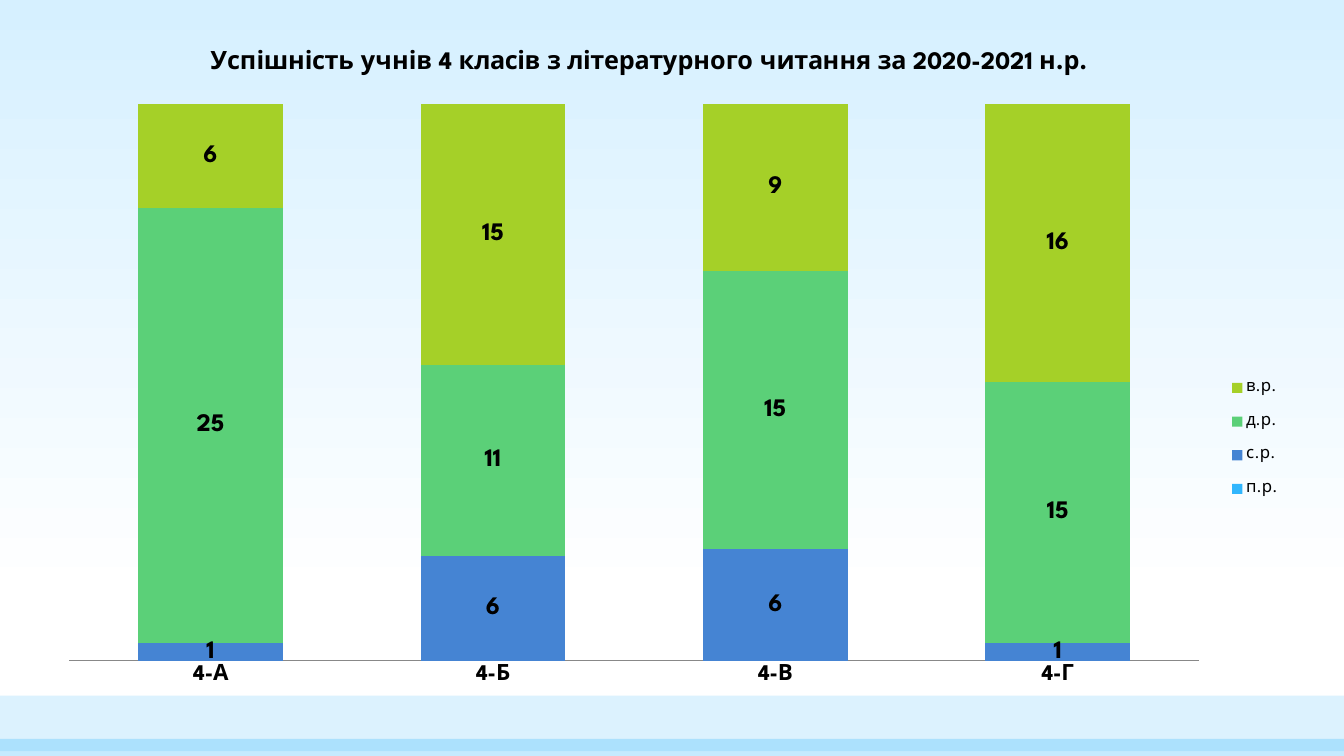
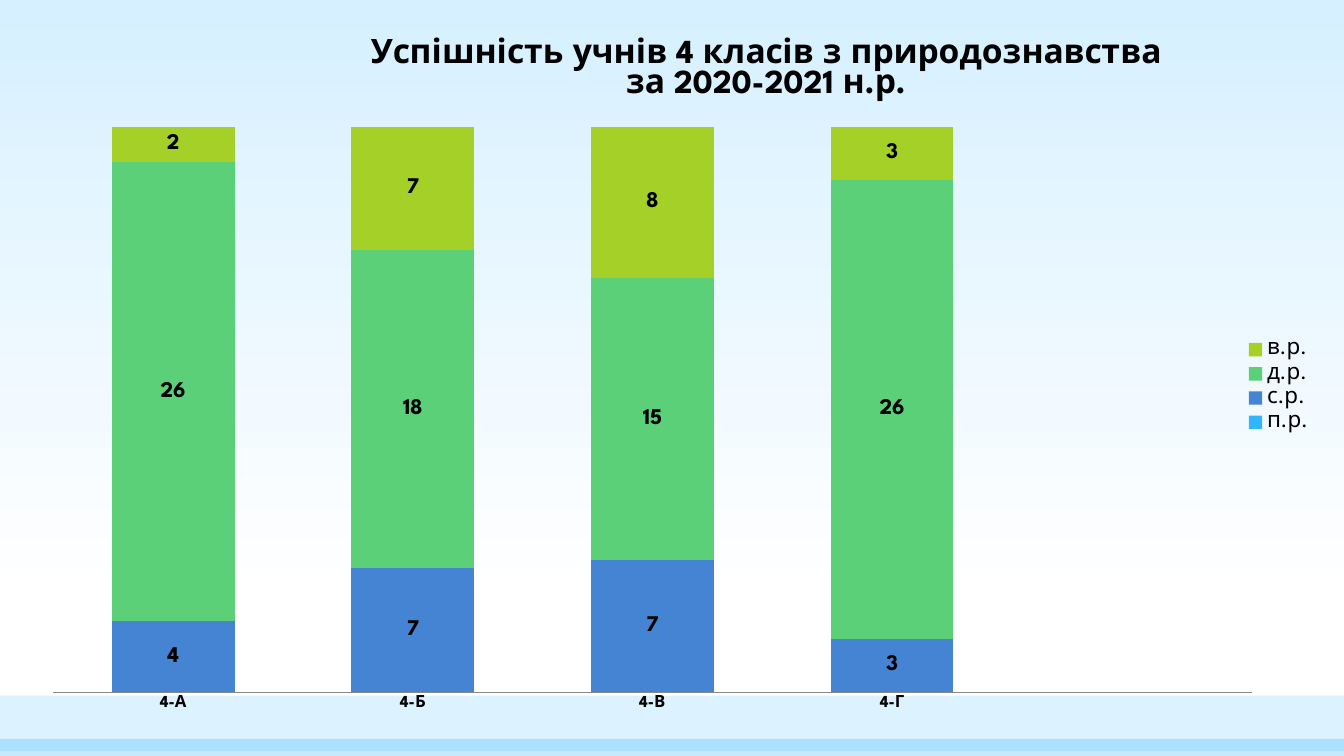
from lxml.etree import SubElement
from pptx import Presentation
from pptx.chart.data import CategoryChartData
from pptx.dml.color import RGBColor
from pptx.enum.chart import XL_CHART_TYPE, XL_LEGEND_POSITION, XL_TICK_MARK
from pptx.enum.shapes import MSO_SHAPE
from pptx.oxml.ns import qn
from pptx.util import Cm, Pt

FONT = "League Spartan"
BLACK = RGBColor(0x00, 0x00, 0x00)
WHITE = RGBColor(0xFF, 0xFF, 0xFF)
SKY = RGBColor(0xD6, 0xF0, 0xFF)
AXIS_GRAY = RGBColor(0x88, 0x88, 0x88)
CYAN = RGBColor(0x31, 0xB6, 0xFD)
BLUE = RGBColor(0x45, 0x84, 0xD3)
GREEN = RGBColor(0x5B, 0xD0, 0x78)
LIME = RGBColor(0xA5, 0xD0, 0x28)

LEVELS = [("п.р.", CYAN), ("с.р.", BLUE), ("д.р.", GREEN), ("в.р.", LIME)]
CLASSES = ["4-А", "4-Б", "4-В", "4-Г"]


def set_background(master):
    fill = master.background.fill
    fill.gradient()
    fill.gradient_angle = 270
    for stop, color, position in zip(fill.gradient_stops, (SKY, WHITE), (0, 0.79)):
        stop.color.rgb = color
        stop.position = position


def add_band(s, top, height, opacity):
    """Add a full-width translucent band; opacity is in percent."""
    band = s.shapes.add_shape(MSO_SHAPE.RECTANGLE, 0, Cm(top), Cm(33.87), Cm(height))
    band.shadow.inherit = False
    band.fill.solid()
    band.fill.fore_color.rgb = CYAN
    band.line.fill.background()
    color = band._element.spPr.find(".//" + qn("a:srgbClr"))
    SubElement(color, qn("a:alpha"), val=str(opacity * 1000))


def set_layout(element, index, box, inner=False):
    """Place a chart part at fractions of the chart: x, y and optionally w, h."""
    for old in element.findall(qn("c:layout")):
        element.remove(old)
    layout = SubElement(element, qn("c:layout"))
    element.insert(index, layout)
    manual = SubElement(layout, qn("c:manualLayout"))
    if inner:
        SubElement(manual, qn("c:layoutTarget"), val="inner")
    for mode in ("xMode", "yMode"):
        SubElement(manual, qn("c:" + mode), val="edge")
    for name, value in zip("xywh", box):
        SubElement(manual, qn("c:" + name), val=str(value))


def style_font(font, size, bold=False):
    font.name = FONT
    font.size = Pt(size)
    font.bold = bold
    font.color.rgb = BLACK


def add_title(chart, lines, size, place):
    tf = chart.chart_title.text_frame
    tf.text = "\n".join(lines)
    for p in tf.paragraphs:
        style_font(p.font, size, True)
    set_layout(chart.chart_title._element, 1, place)


def add_legend(chart, size, box):
    chart.has_legend = True
    chart.legend.position = XL_LEGEND_POSITION.RIGHT
    chart.legend.include_in_layout = False
    style_font(chart.legend.font, size)
    set_layout(chart.legend._element, 1, box)


def style_axes(chart, size):
    axis = chart.category_axis
    axis.major_tick_mark = XL_TICK_MARK.NONE
    axis.format.line.color.rgb = AXIS_GRAY
    style_font(axis.tick_labels.font, size, True)
    chart.value_axis.has_major_gridlines = False
    chart.value_axis.visible = False


def add_level_chart(s, box, categories, counts, plot_box, label_size, axis_size):
    """Add a 100% column chart; counts holds one list per level."""
    data = CategoryChartData()
    data.categories = categories
    for (name, _), values in zip(LEVELS, counts):
        data.add_series(name, values + [None] * (len(categories) - len(values)))
    chart = s.shapes.add_chart(
        XL_CHART_TYPE.COLUMN_STACKED_100, *map(Cm, box), data).chart
    style_font(chart.font, 10)
    plot = chart.plots[0]
    plot.gap_width = 95
    plot.overlap = 100
    plot.vary_by_categories = False
    plot.has_data_labels = True
    plot.data_labels.show_value = True
    style_font(plot.data_labels.font, label_size, True)
    for series, (_, color) in zip(plot.series, LEVELS):
        series.format.fill.solid()
        series.format.fill.fore_color.rgb = color
    style_axes(chart, axis_size)
    set_layout(chart._chartSpace.find(".//" + qn("c:plotArea")), 0, plot_box, True)
    return chart


def add_slide(prs):
    s = prs.slides.add_slide(prs.slide_layouts[6])
    add_band(s, 17.53, 1.4, 17)
    add_band(s, 18.62, 0.43, 28)
    return s


def main():
    prs = Presentation()
    prs.slide_width, prs.slide_height = Cm(33.87), Cm(19.05)
    set_background(prs.slide_master)

    reading = add_level_chart(
        add_slide(prs), (1.12, 0.94, 31.29, 16.71), CLASSES,
        [[], [1, 6, 6, 1], [25, 11, 15, 15], [6, 15, 9, 16]],
        plot_box=(0.02, 0.1, 0.91, 0.84), label_size=18, axis_size=16)
    add_title(reading, ["Успішність учнів 4 класів з літературного читання за 2020-2021 н.р."],
              18, (0.13, 0.01))
    add_legend(reading, 12, (0.95, 0.49, 0.05, 0.23))

    nature = add_level_chart(
        add_slide(prs), (0.86, 0.71, 32.33, 18.03), CLASSES + [""],
        [[], [4, 7, 7, 3], [26, 18, 15, 26], [2, 7, 8, 3]],
        plot_box=(0.015, 0.138, 0.934, 0.79), label_size=16, axis_size=12)
    add_title(nature, ["Успішність учнів 4 класів з природознавства", "за 2020-2021 н.р."],
              24, (0.26, 0.01))
    add_legend(nature, 16, (0.94, 0.43, 0.06, 0.14))

    prs.save("out.pptx")


if __name__ == "__main__":
    main()
